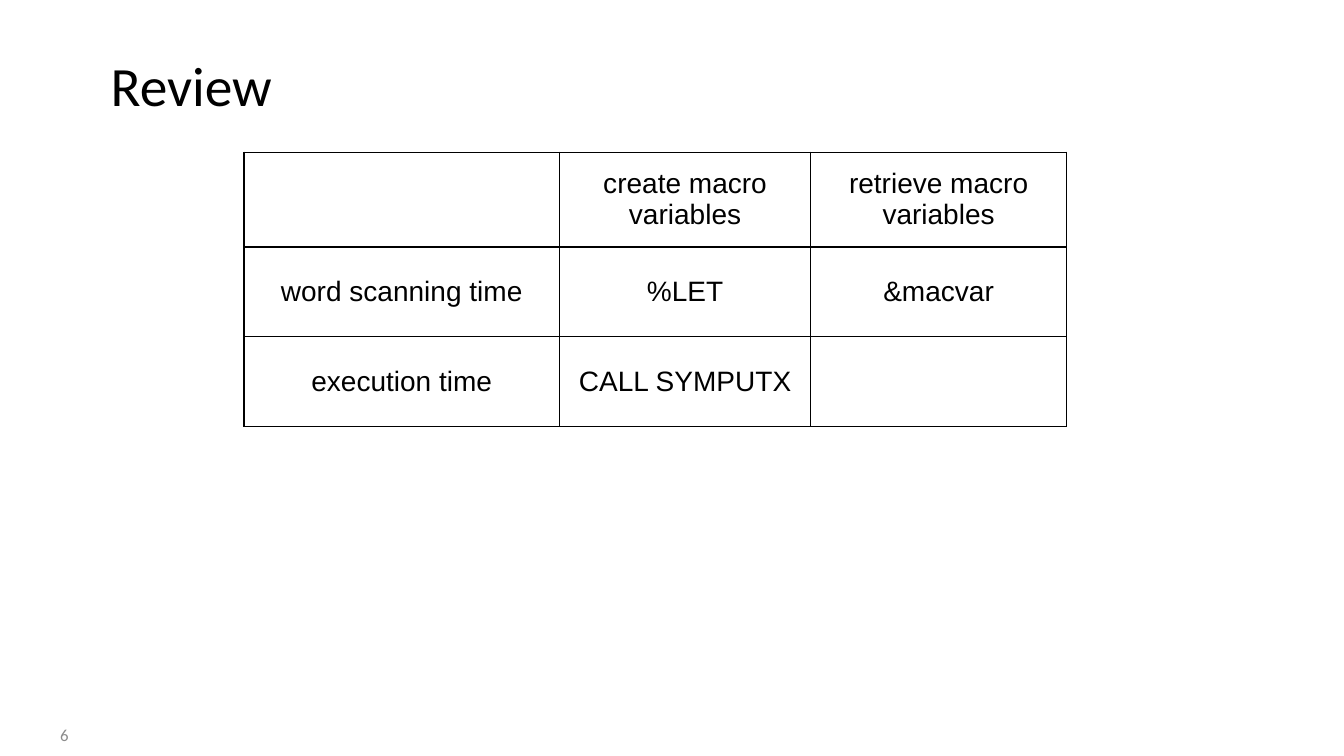
from lxml import etree
from pptx import Presentation
from pptx.dml.color import RGBColor
from pptx.enum.text import MSO_ANCHOR as Anchor, PP_ALIGN as Align
from pptx.oxml.ns import qn
from pptx.util import Pt

PX = 9144
COLORS = {"ink": "000000", "number": "8C8C8C"}
COLUMN_WIDTHS = [313, 249, 254]
ROW_HEIGHTS = [94, 89, 89]
REVIEW_ROWS = [
    ["", "create macro variables", "retrieve macro variables"],
    ["word scanning time", "%LET", "&macvar"],
    ["execution time", "CALL SYMPUTX", ""],
]


def write_text(frame, text, size, font, color, align):
    paragraph = frame.paragraphs[0]
    paragraph.alignment = align
    run = paragraph.add_run()
    run.text = text
    run.font.size = Pt(size)
    run.font.name = font
    run.font.color.rgb = RGBColor.from_string(COLORS[color])
    return paragraph


def add_border(cell, side):
    line = etree.SubElement(cell._tc.get_or_add_tcPr(), qn(f"a:{side}"), w=str(Pt(1)))
    fill = etree.SubElement(line, qn("a:solidFill"))
    etree.SubElement(fill, qn("a:srgbClr"), val=COLORS["ink"])


presentation = Presentation()
presentation.slide_width = 1333 * PX
presentation.slide_height = 750 * PX
slide = presentation.slides.add_slide(presentation.slide_layouts[6])

for text, box, size, color, align in [
    ("Review", (100, 50, 1233, 75), 39.6, "ink", Align.LEFT),
    ("6", (0, 708, 78, 42), 12, "number", Align.RIGHT),
]:
    frame = slide.shapes.add_textbox(*[length * PX for length in box]).text_frame
    frame.word_wrap = True
    frame.vertical_anchor = Anchor.MIDDLE
    paragraph = write_text(frame, text, size, "Calibri", color, align)
    if text == "Review":
        paragraph.line_spacing = 0.9

table = slide.shapes.add_table(
    len(ROW_HEIGHTS), len(COLUMN_WIDTHS), 242 * PX, 151 * PX,
    sum(COLUMN_WIDTHS) * PX, sum(ROW_HEIGHTS) * PX,
).table
table.first_row = False
table.horz_banding = False
for column, width in zip(table.columns, COLUMN_WIDTHS):
    column.width = width * PX
for row, height, texts in zip(table.rows, ROW_HEIGHTS, REVIEW_ROWS):
    row.height = height * PX
    for cell, text in zip(row.cells, texts):
        cell.vertical_anchor = Anchor.MIDDLE
        cell.margin_left = cell.margin_right = 10 * PX
        cell.margin_top = cell.margin_bottom = 10 * PX
        for side in ("lnL", "lnR", "lnT", "lnB"):
            add_border(cell, side)
        cell.fill.background()
        if text:
            write_text(cell.text_frame, text, 20, "Arial", "ink", Align.CENTER)

presentation.save("out.pptx")
